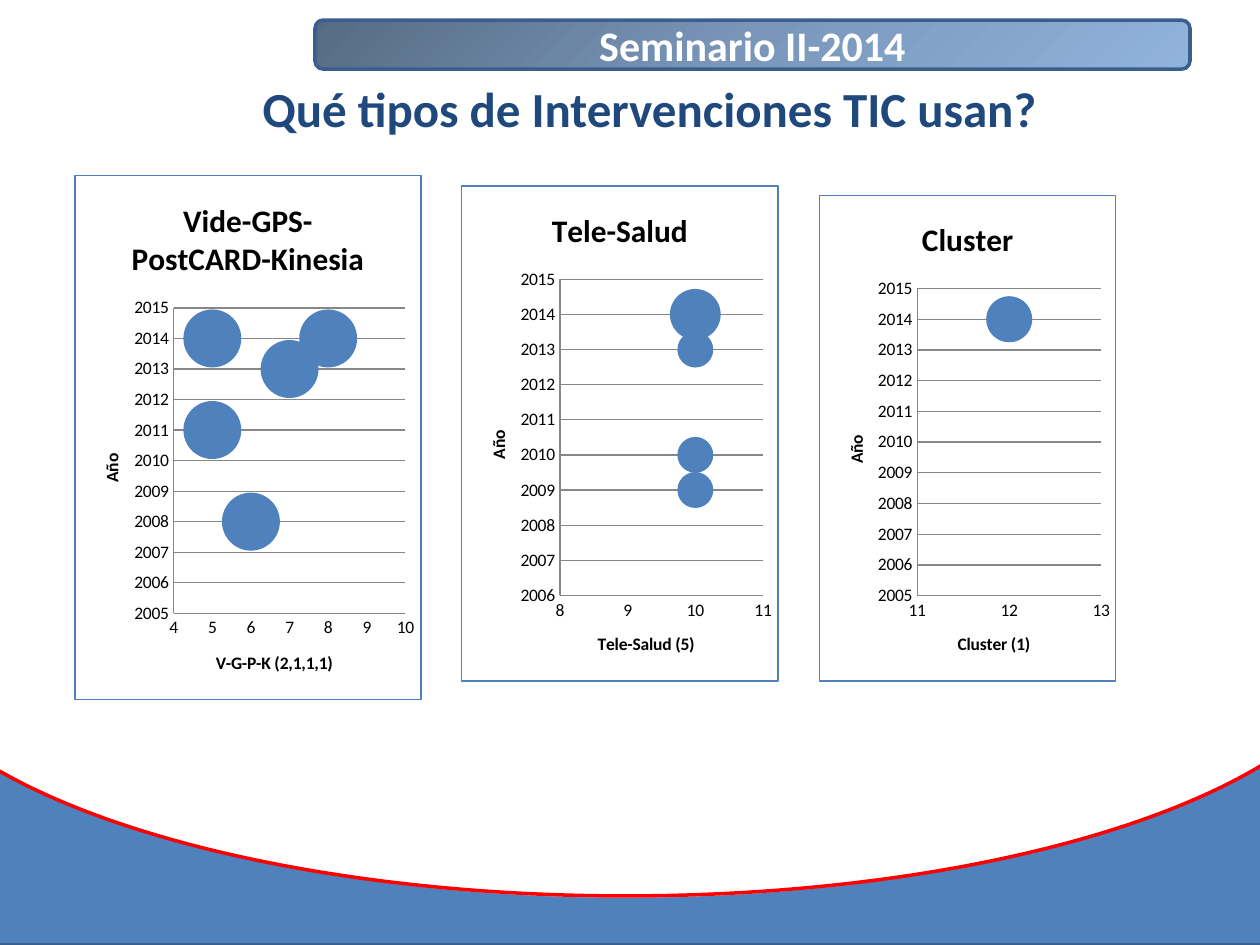
"""Build the seminar slide with three bubble charts of ICT interventions."""
from copy import deepcopy

from lxml import etree
from pptx import Presentation
from pptx.chart import data as cd
from pptx.dml import color as dc
from pptx.enum import chart as ch, shapes, text
from pptx.oxml import ns
from pptx.util import Pt

FONT = "Calibri"
BLUE, DARK, NAVY = "4F81BD", "3A5F8C", "1F497D"
WHITE, BLACK, RED, GREY = "FFFFFF", "000000", "FF0000", "878787"
HEADER = "Seminario II-2014"
TITLE = "Qué tipos de Intervenciones TIC usan?"
GRADIENT = [(0, "566A83"), (0.5, "7A97BA"), (1, "90B3DC")]
RECT, OVAL = shapes.MSO_SHAPE.RECTANGLE, shapes.MSO_SHAPE.OVAL
BACKDROP = [
    (RECT, (-67.5, 276, 872, 264), BLUE, DARK),
    (OVAL, (-78.5, 174, 872, 338), WHITE, WHITE),
    (OVAL, (-67.5, 202, 850, 310), None, RED),
    (RECT, (-67.5, 0, 872, 422), WHITE, WHITE),
]
CHARTS = [
    {"title": "Vide-GPS-PostCARD-Kinesia", "label": "V-G-P-K (2,1,1,1)",
     "at": (42.5, 100, 198.5, 300), "x": (4, 10), "years": (2005, 2015),
     "points": [(5, 2011, 1), (5, 2014, 1), (6, 2008, 1), (7, 2013, 1), (8, 2014, 1)]},
    {"title": "Tele-Salud", "label": "Tele-Salud (5)",
     "at": (263.5, 106, 181.5, 283.5), "x": (8, 11), "years": (2006, 2015),
     "points": [(10, 2009, 1), (10, 2010, 1), (10, 2013, 1), (10, 2014, 2)]},
    {"title": "Cluster", "label": "Cluster (1)",
     "at": (468, 111.5, 170, 278), "x": (11, 13), "years": (2005, 2015),
     "points": [(12, 2014, 3)]},
]


def rgb(value):
    return dc.RGBColor.from_string(value)


def points(lengths):
    return [Pt(length) for length in lengths]


def set_font(font, size, color, bold=True):
    font.name, font.size, font.bold = FONT, Pt(size), bold
    font.color.rgb = rgb(color)


def add_panel(page, kind, at, fill, line):
    panel = page.shapes.add_shape(kind, *points(at))
    panel.shadow.inherit = False
    if fill:
        panel.fill.solid()
        panel.fill.fore_color.rgb = rgb(fill)
    else:
        panel.fill.background()
    panel.line.color.rgb = rgb(line)
    panel.line.width = Pt(2)
    return panel


def write(box, words, size, color):
    frame = box.text_frame
    frame.word_wrap = True
    frame.vertical_anchor = text.MSO_ANCHOR.MIDDLE
    frame.margin_top = frame.margin_bottom = 0
    para = frame.paragraphs[0]
    para.text = words
    para.alignment = text.PP_ALIGN.CENTER
    set_font(para.font, size, color)


def add_header(page):
    header = add_panel(page, shapes.MSO_SHAPE.ROUNDED_RECTANGLE,
                       (180, 11.5, 500, 28), BLUE, DARK)
    header.fill.gradient()
    header.fill.gradient_angle = 315
    stops = header.element.find(".//" + ns.qn("a:gsLst"))
    stops.append(deepcopy(stops[-1]))
    for stop, (position, color) in zip(header.fill.gradient_stops, GRADIENT):
        stop.position = position
        stop.color.rgb = rgb(color)
    write(header, HEADER, 24, WHITE)


def set_title(title, words, size):
    para = title.text_frame.paragraphs[0]
    para.text = words
    set_font(para.font, size, BLACK)


def style_axis(axis, words, limits):
    axis.minimum_scale, axis.maximum_scale = limits
    axis.major_unit = 1
    axis.major_tick_mark = axis.minor_tick_mark = ch.XL_TICK_MARK.NONE
    axis.crosses = ch.XL_AXIS_CROSSES.MINIMUM
    axis.tick_labels.number_format = "General"
    axis.tick_labels.number_format_is_linked = False
    axis.format.line.color.rgb = rgb(GREY)
    set_title(axis.axis_title, words, 10)


def add_border(chart):
    border = etree.fromstring(
        f'<c:spPr {ns.nsdecls("c", "a")}>'
        f'<a:solidFill><a:srgbClr val="{WHITE}"/></a:solidFill>'
        f'<a:ln w="{Pt(0.75)}"><a:solidFill><a:srgbClr val="{BLUE}"/></a:solidFill></a:ln>'
        '</c:spPr>')
    chart.element.find(ns.qn("c:chart")).addnext(border)


def add_bubbles(page, item):
    data = cd.BubbleChartData(number_format="General")
    bubbles = data.add_series("Series 1")
    for x, year, size in item["points"]:
        bubbles.add_data_point(x, year, size)
    chart = page.shapes.add_chart(
        ch.XL_CHART_TYPE.BUBBLE, *points(item["at"]), data).chart
    set_font(chart.font, 10, BLACK, False)
    chart.has_legend = False
    chart.has_title = True
    set_title(chart.chart_title, item["title"], 18)
    plot = chart.plots[0]
    plot.bubble_scale = 100
    plot.series[0].format.fill.solid()
    plot.series[0].format.fill.fore_color.rgb = rgb(BLUE)
    years = chart.value_axis
    style_axis(chart.category_axis, item["label"], item["x"])
    style_axis(years, "Año", item["years"])
    chart.category_axis.has_major_gridlines = False
    years.has_major_gridlines = True
    years.major_gridlines.format.line.color.rgb = rgb(GREY)
    body = years.axis_title.element.find(".//" + ns.qn("a:bodyPr"))
    body.set("rot", "-5400000")
    body.set("vert", "horz")
    add_border(chart)


def main():
    deck = Presentation()
    deck.slide_width, deck.slide_height = points((720, 540))
    page = deck.slides.add_slide(deck.slide_layouts[6])
    for panel in BACKDROP:
        add_panel(page, *panel)
    add_header(page)
    write(page.shapes.add_textbox(*points((84, 44, 574, 35))), TITLE, 28, NAVY)
    for item in CHARTS:
        add_bubbles(page, item)
    deck.save("out.pptx")


if __name__ == "__main__":
    main()
